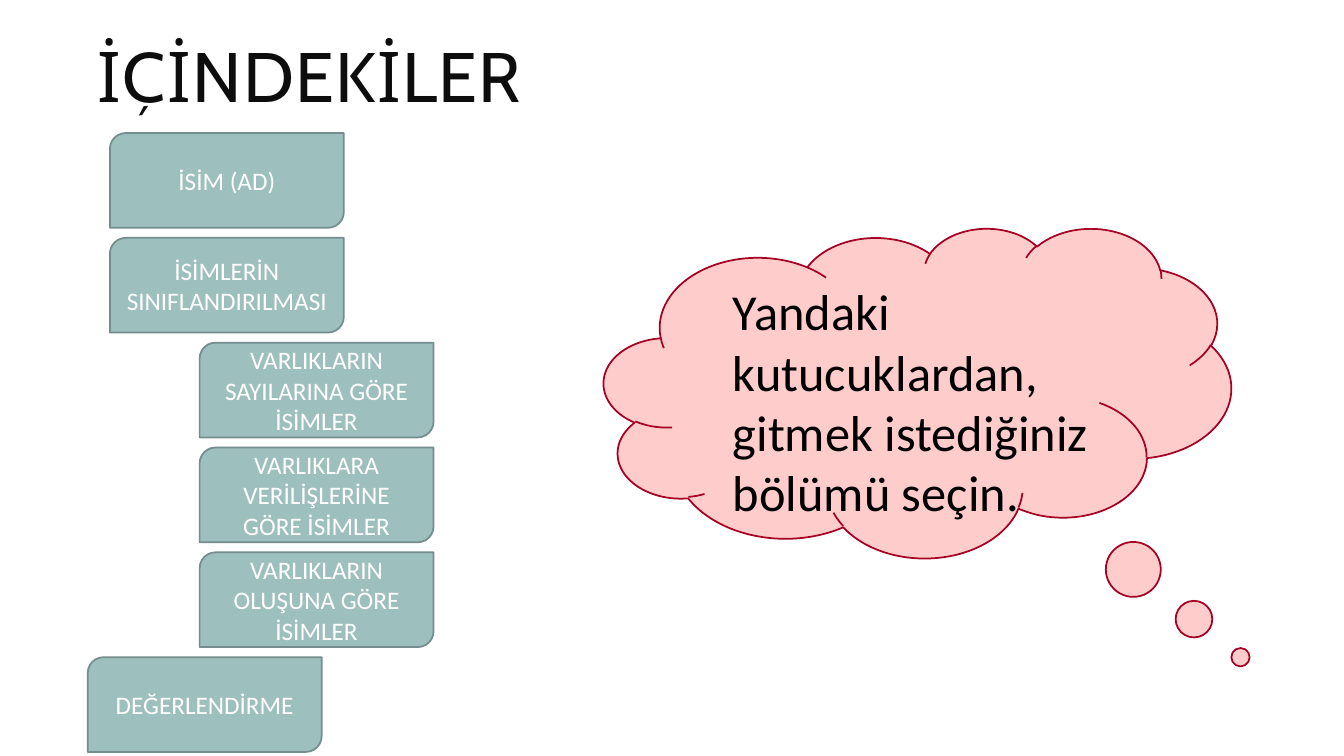
from pptx import Presentation
from pptx.dml.color import RGBColor
from pptx.enum.shapes import MSO_SHAPE
from pptx.enum.text import MSO_ANCHOR, MSO_AUTO_SIZE, PP_ALIGN
from pptx.util import Pt

TITLE = "İÇİNDEKİLER"
NOTE = "Yandaki kutucuklardan, gitmek istediğiniz bölümü seçin."
ITEMS = [
    (109, "İSİM (AD)"),
    (109, "İSİMLERİN SINIFLANDIRILMASI"),
    (198, "VARLIKLARIN SAYILARINA GÖRE İSİMLER"),
    (198, "VARLIKLARA VERİLİŞLERİNE GÖRE İSİMLER"),
    (198, "VARLIKLARIN OLUŞUNA GÖRE İSİMLER"),
    (87, "DEĞERLENDİRME"),
]
COLORS = {
    "title": "0D0D0D", "note": "000000", "label": "FFFFFF",
    "box": "9DBFBE", "edge": "748D8D",
    "cloud": "FFCCCC", "rim": "A50021",
}
SCALE = 9144
TOP, STEP, WIDE, HIGH = 132, 104, 232, 94


def px(*sizes):
    return [size * SCALE for size in sizes]


def color(name):
    return RGBColor.from_string(COLORS[name])


def write(frame, text, font, size, ink, align, anchor):
    frame.word_wrap = True
    frame.auto_size = MSO_AUTO_SIZE.NONE
    frame.vertical_anchor = anchor
    frame.text = text
    par = frame.paragraphs[0]
    par.alignment = align
    run = par.runs[0]
    run.font.name = font
    run.font.size = Pt(size)
    run.font.color.rgb = color(ink)
    return par


def draw(kind, area, fill, line):
    shape = slide.shapes.add_shape(kind, *px(*area))
    shape.shadow.inherit = False
    shape.fill.solid()
    shape.fill.fore_color.rgb = color(fill)
    shape.line.color.rgb = color(line)
    shape.line.width = Pt(1.25)
    return shape


deck = Presentation()
deck.slide_width, deck.slide_height = px(1333, 750)
slide = deck.slides.add_slide(deck.slide_layouts[5])

title = slide.shapes.title
title.left, title.top, title.width, title.height = px(87, 0, 1063, 164)
par = write(title.text_frame, TITLE, "Cabin", 50, "title",
            PP_ALIGN.LEFT, MSO_ANCHOR.MIDDLE)
par.line_spacing = 0.8
par.runs[0].font._element.set("spc", "100")

cloud = draw(MSO_SHAPE.CLOUD_CALLOUT, (599, 226, 622, 327), "cloud", "rim")
cloud.adjustments[0] = 0.515
cloud.adjustments[1] = 0.803
note = slide.shapes.add_textbox(*px(717, 273, 458, 252))
write(note.text_frame, NOTE, "Calibri", 36, "note",
      PP_ALIGN.LEFT, MSO_ANCHOR.TOP)

for row, (left, text) in enumerate(ITEMS):
    area = (left, TOP + row * STEP, WIDE, HIGH)
    box = draw(MSO_SHAPE.ROUND_2_DIAG_RECTANGLE, area, "box", "edge")
    write(box.text_frame, text, "Calibri", 18, "label",
          PP_ALIGN.CENTER, MSO_ANCHOR.MIDDLE)

deck.save("out.pptx")
